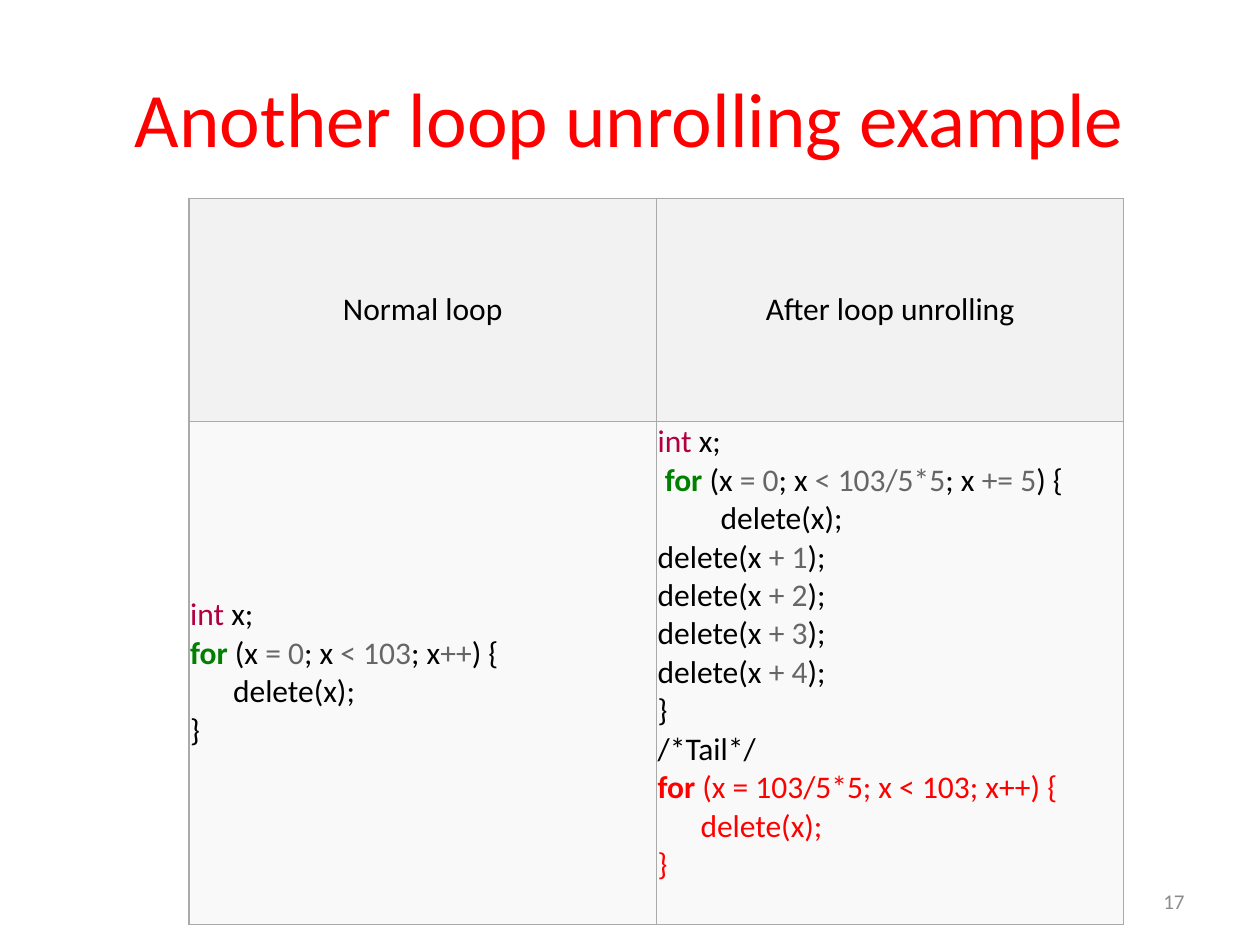
from lxml.etree import SubElement
from pptx import Presentation
from pptx.dml.color import RGBColor
from pptx.enum.text import MSO_ANCHOR as Anchor, PP_ALIGN as Align
from pptx.oxml.ns import qn
from pptx.util import Inches, Pt

WIDTH, HEIGHT = Inches(10), Inches(7.5)
FONT = "Calibri"
COLORS = {
    "text": "000000",
    "accent": "FF0000",
    "type": "B00040",
    "keyword": "008000",
    "operator": "666666",
    "number": "8C8C8C",
    "border": "AAAAAA",
    "header": "F2F2F2",
    "body": "F9F9F9",
}
COLUMN_WIDTH = Inches(3.71)
ROW_HEIGHTS = [Inches(1.77), Inches(3.99)]
CELL_INSET = Inches(0.01)
INDENT, DEEP_INDENT = Inches(0.34), Inches(0.5)

DECLARATION = (0, [("int", "type"), (" x;", "text")])
CLOSING = (0, [("}", "text")])


def loop_header(keyword, limit, gap, step):
    return (0, keyword + [
        ("(x ", "text"), ("= 0", "operator"), ("; x ", "text"),
        (f"< {limit}", "operator"), (f"; x{gap}", "text"),
        (step, "operator"), (") {", "text"),
    ])


def delete_offset(offset):
    return (0, [("delete(x ", "text"), (f"+ {offset}", "operator"), (");", "text")])


NORMAL_LOOP = [
    DECLARATION,
    loop_header([("for ", "keyword")], "103", "", "++"),
    (INDENT, [("delete(x);", "text")]),
    CLOSING,
]
UNROLLED_LOOP = [
    DECLARATION,
    loop_header([(" ", "text"), ("for", "keyword"), (" ", "text")], "103/5*5", " ", "+= 5"),
    (DEEP_INDENT, [("delete(x);", "text")]),
    *[delete_offset(offset) for offset in range(1, 5)],
    CLOSING,
    (0, [("/*Tail*/", "text")]),
    (0, [("for", "accent", True), (" (x = 103/5*5; x < 103; x++) {", "accent")]),
    (INDENT, [("delete(x);", "accent")]),
    (0, [("}", "accent")]),
]


def add_run(paragraph, text, color, size, bold=False):
    run = paragraph.add_run()
    run.text = text
    run.font.name = FONT
    run.font.size = Pt(size)
    run.font.bold = bold
    run.font.color.rgb = RGBColor.from_string(COLORS[color])


def add_label(slide, text, box, size, color, align):
    left, top, width, height = box
    shape = slide.shapes.add_textbox(
        int(WIDTH * left), int(HEIGHT * top), int(WIDTH * width), int(HEIGHT * height))
    frame = shape.text_frame
    frame.word_wrap = True
    frame.vertical_anchor = Anchor.MIDDLE
    paragraph = frame.paragraphs[0]
    paragraph.alignment = align
    add_run(paragraph, text, color, size)


def style_cell(cell, fill, anchor):
    cell.margin_left = cell.margin_right = CELL_INSET
    cell.margin_top = cell.margin_bottom = CELL_INSET
    cell.vertical_anchor = anchor
    properties = cell._tc.get_or_add_tcPr()
    for side in ("lnL", "lnR", "lnT", "lnB"):
        line = SubElement(properties, qn(f"a:{side}"), w=str(Pt(0.75)))
        solid = SubElement(line, qn("a:solidFill"))
        SubElement(solid, qn("a:srgbClr"), val=COLORS["border"])
    cell.fill.solid()
    cell.fill.fore_color.rgb = RGBColor.from_string(COLORS[fill])


def fill_header(cell, text):
    style_cell(cell, "header", Anchor.MIDDLE)
    paragraph = cell.text_frame.paragraphs[0]
    paragraph.alignment = Align.CENTER
    add_run(paragraph, text, "text", 18)


def fill_code(cell, lines, anchor):
    style_cell(cell, "body", anchor)
    frame = cell.text_frame
    for index, (indent, tokens) in enumerate(lines):
        paragraph = frame.add_paragraph() if index else frame.paragraphs[0]
        paragraph.alignment = Align.LEFT
        if indent:
            paragraph._p.get_or_add_pPr().set("marL", str(indent))
        for text, color, *bold in tokens:
            add_run(paragraph, text, color, 18, color == "keyword" or bool(bold))


def add_comparison(slide, columns):
    table = slide.shapes.add_table(
        len(ROW_HEIGHTS), len(columns), int(WIDTH * 0.15), int(HEIGHT * 0.21),
        COLUMN_WIDTH * len(columns), sum(ROW_HEIGHTS)).table
    for row, height in zip(table.rows, ROW_HEIGHTS):
        row.height = height
    for index, (heading, lines, anchor) in enumerate(columns):
        table.columns[index].width = COLUMN_WIDTH
        fill_header(table.cell(0, index), heading)
        fill_code(table.cell(1, index), lines, anchor)


def main():
    presentation = Presentation()
    presentation.slide_width, presentation.slide_height = WIDTH, HEIGHT
    slide = presentation.slides.add_slide(presentation.slide_layouts[6])
    add_label(slide, "Another loop unrolling example", (0.05, 0.04, 0.9, 0.167),
              44, "accent", Align.CENTER)
    add_label(slide, "17", (0.717, 0.927, 0.233, 0.053), 12, "number", Align.RIGHT)
    add_comparison(slide, [
        ("Normal loop", NORMAL_LOOP, Anchor.MIDDLE),
        ("After loop unrolling", UNROLLED_LOOP, Anchor.TOP),
    ])
    presentation.save("out.pptx")


if __name__ == "__main__":
    main()
